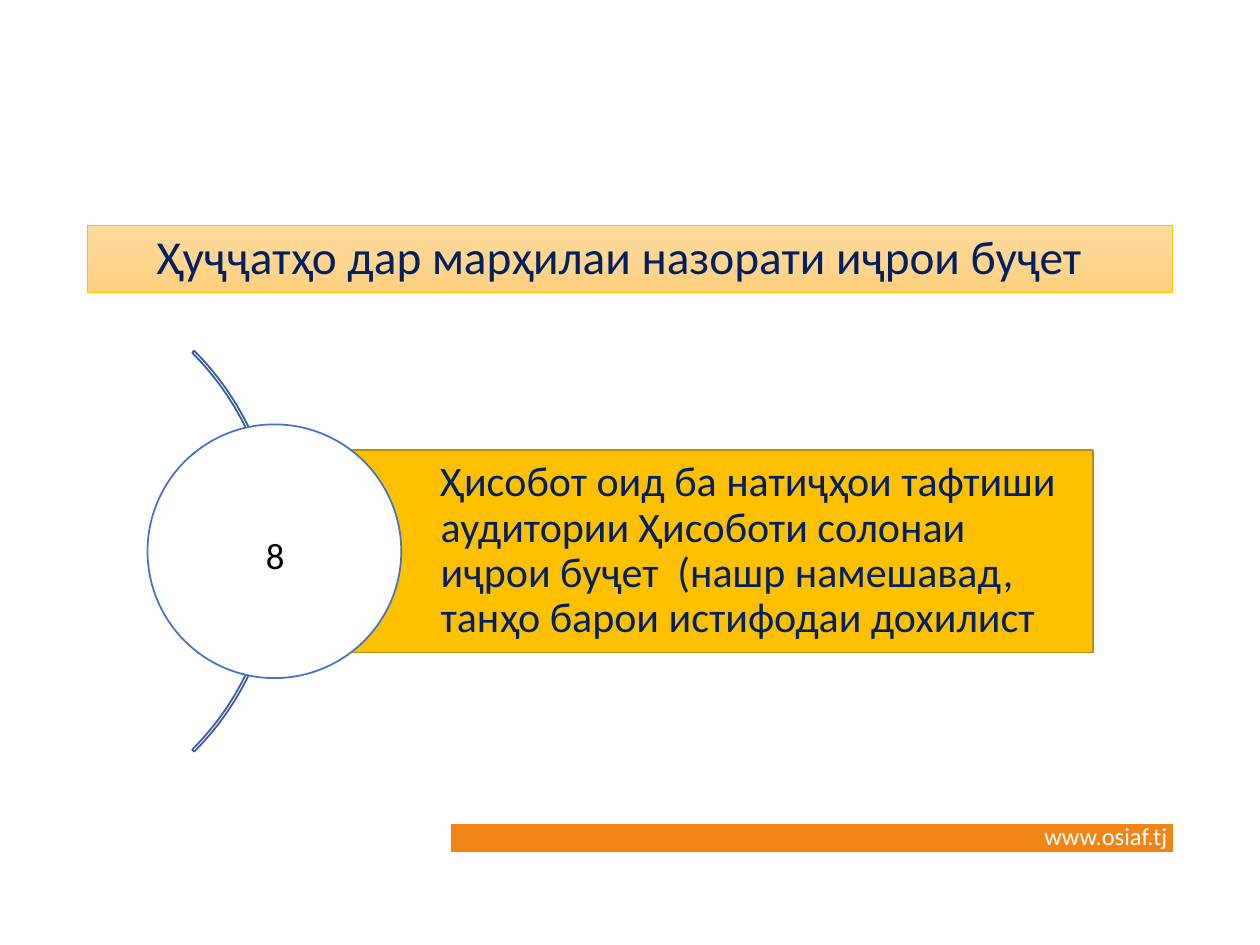
import copy

import pptx
import pptx.dml.color
import pptx.enum.shapes
import pptx.enum.text
import pptx.oxml.ns
import pptx.util
from lxml import etree

Pt = pptx.util.Pt
RGB = pptx.dml.color.RGBColor
Shape = pptx.enum.shapes.MSO_SHAPE
Align = pptx.enum.text.PP_ALIGN
Anchor = pptx.enum.text.MSO_ANCHOR

# Content
TITLE = "Ҳуҷҷатҳо дар марҳилаи назорати иҷрои буҷет"
NUMBER = "8"
REPORT = ("Ҳисобот оид ба натиҷҳои тафтиши аудитории Ҳисоботи солонаи "
          "иҷрои буҷет  (нашр намешавад, танҳо барои истифодаи дохилист")
WEBSITE = "www.osiaf.tj"

# Colours and font
FONT = "Calibri"
NAVY = RGB(0x00, 0x20, 0x60)
BLACK = RGB(0x00, 0x00, 0x00)
WHITE = RGB(0xFF, 0xFF, 0xFF)
GOLD = RGB(0xFF, 0xC0, 0x00)
DARK_GOLD = RGB(0xBD, 0x8E, 0x00)
BLUE = RGB(0x44, 0x72, 0xC4)
DARK_BLUE = RGB(0x36, 0x5B, 0x9D)
ORANGE = RGB(0xF0, 0x84, 0x16)
TITLE_GRADIENT = [(0, RGB(0xFF, 0xDB, 0x9E)),
                  (0.5, RGB(0xFF, 0xD5, 0x90)),
                  (1, RGB(0xFF, 0xD0, 0x7C))]

# Geometry in points: everything in the diagram shares one middle line
MIDDLE = 315
ARC_SIZE, CIRCLE_SIZE = 324, 145
ARC_CENTRE, CIRCLE_CENTRE = -3.6, 156.8
REPORT_WIDTH, REPORT_HEIGHT = 468, 116
FOOTER_Y = 478.8


def write(shape, text, size, color, align=Align.LEFT, spacing=1.0,
          anchor=Anchor.MIDDLE, insets=(7.2, 3.6, 7.2, 3.6)):
    frame = shape.text_frame
    frame.word_wrap = True
    frame.auto_size = pptx.enum.text.MSO_AUTO_SIZE.NONE
    frame.vertical_anchor = anchor
    (frame.margin_left, frame.margin_top,
     frame.margin_right, frame.margin_bottom) = map(Pt, insets)
    para = frame.paragraphs[0]
    para.alignment = align
    para.line_spacing = spacing
    span = para.add_run()
    span.text = text
    span.font.name = FONT
    span.font.size = Pt(size)
    span.font.color.rgb = color


def add_shape(kind, left, width, height, fill, line, middle=MIDDLE):
    shape = page.shapes.add_shape(
        kind, Pt(left), Pt(middle - height / 2), Pt(width), Pt(height))
    shape.shadow.inherit = False
    if fill is None:
        shape.fill.background()
    else:
        shape.fill.solid()
        shape.fill.fore_color.rgb = fill
    if line is None:
        shape.line.fill.background()
    else:
        shape.line.color.rgb = line
        shape.line.width = Pt(1)
    return shape


deck = pptx.Presentation()
deck.slide_width, deck.slide_height = Pt(720), Pt(540)
page = deck.slides.add_slide(deck.slide_layouts[5])

# Footer bar and web address
bar = page.shapes.add_connector(
    pptx.enum.shapes.MSO_CONNECTOR.STRAIGHT,
    Pt(257.8), Pt(FOOTER_Y), Pt(670.3), Pt(FOOTER_Y))
bar.line.color.rgb = ORANGE
bar.line.width = Pt(16)
etree.SubElement(bar.element.spPr, pptx.oxml.ns.qn("a:effectLst"))
address = page.shapes.add_textbox(Pt(589.7), Pt(465.8), Pt(114.5), Pt(24.5))
write(address, WEBSITE, 14, WHITE, anchor=Anchor.TOP)

# Title band; the wider right inset moves the text left of centre
title = page.shapes.title
title.left, title.top = Pt(49.7), Pt(128.9)
title.width, title.height = Pt(620.6), Pt(38.5)
title.fill.gradient()
title.fill.gradient_angle = 270
stop_list = title.element.spPr.find(".//" + pptx.oxml.ns.qn("a:gsLst"))
stop_list.append(copy.deepcopy(stop_list[-1]))
for stop, (position, color) in zip(title.fill.gradient_stops, TITLE_GRADIENT):
    stop.position = position
    stop.color.rgb = color
title.line.color.rgb = GOLD
title.line.width = Pt(0.5)
write(title, TITLE, 27, NAVY, Align.CENTER, 0.9, insets=(7.2, 3.6, 19.4, 3.6))

# Arc, report and numbered circle
arc = add_shape(Shape.BLOCK_ARC, ARC_CENTRE - ARC_SIZE / 2,
                ARC_SIZE, ARC_SIZE, None, DARK_BLUE)
for index, value in enumerate((189, 27, 0.005)):
    arc.adjustments[index] = value

report = add_shape(Shape.RECTANGLE, CIRCLE_CENTRE, REPORT_WIDTH,
                   REPORT_HEIGHT, GOLD, DARK_GOLD)
write(report, REPORT, 24, NAVY, spacing=0.9, insets=(95, 5, 5, 5))

add_shape(Shape.OVAL, CIRCLE_CENTRE - CIRCLE_SIZE / 2,
          CIRCLE_SIZE, CIRCLE_SIZE, WHITE, BLUE)
number = add_shape(Shape.RECTANGLE, 136.8, 41, 38.2, WHITE, None, middle=317.2)
write(number, NUMBER, 21, BLACK, Align.CENTER)

deck.save("out.pptx")
